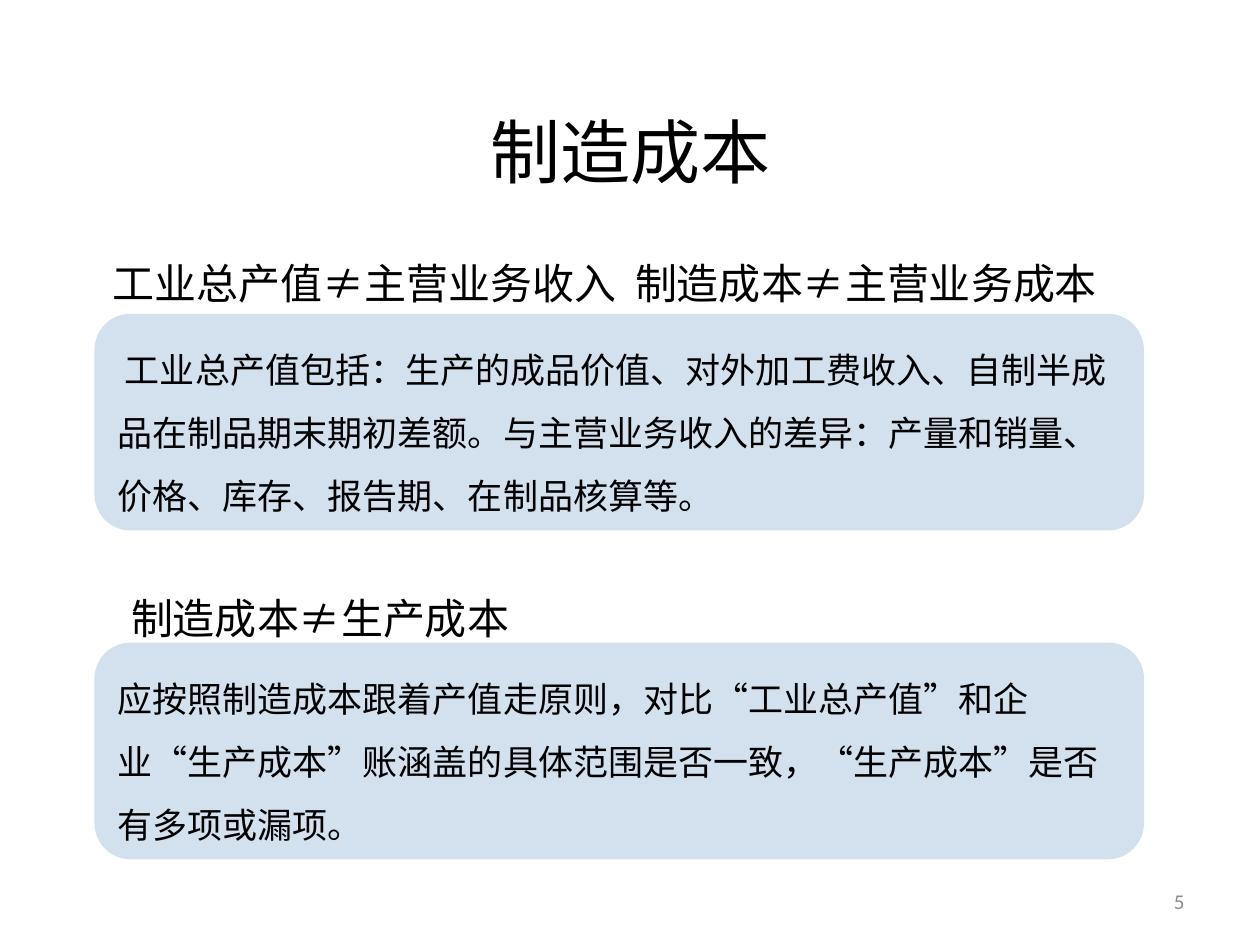
from lxml.etree import SubElement
from pptx import Presentation
from pptx.dml.color import RGBColor
from pptx.enum.shapes import MSO_SHAPE as Shape
from pptx.enum.text import MSO_ANCHOR as Anchor, PP_ALIGN as Align
from pptx.oxml.ns import qn
from pptx.util import Inches, Pt

BLACK = RGBColor(0x00, 0x00, 0x00)
GRAY = RGBColor(0x8C, 0x8C, 0x8C)
PANEL_BLUE = RGBColor(0xB9, 0xCD, 0xE5)
PANEL_OPACITY = 62
CJK_FONT = "Noto Sans CJK SC"

# Content
TITLE = "制造成本"
PAGE_NUMBER = "5"
SECTIONS = [
    {
        "heading": "工业总产值≠主营业务收入\t制造成本≠主营业务成本",
        "heading_at": (0.76, 1.78),
        "body": "工业总产值包括：生产的成品价值、对外加工费收入、自制半成品在制品期末期初差额。"
                "与主营业务收入的差异：产量和销量、价格、库存、报告期、在制品核算等。",
        "panel_top": 2.49,
        "indent": 0.06,
    },
    {
        "heading": "制造成本≠生产成本",
        "heading_at": (0.91, 4.44),
        "body": "应按照制造成本跟着产值走原则，对比“工业总产值”和企业“生产成本”账涵盖的具体范围是否一致，"
                "“生产成本”是否有多项或漏项。",
        "panel_top": 5.1,
        "indent": 0,
    },
]
PANEL_LEFT, PANEL_WIDTH, PANEL_HEIGHT = 0.75, 8.33, 1.72
HEADING_SIZE = (8.32, 0.65)
HEADING_TAB = 4.15


def write(shape, text, size, color=BLACK, font=CJK_FONT, align=Align.LEFT,
          anchor=Anchor.MIDDLE, spacing=1.0, inset=(0.1, 0.05), indent=0, tab=None):
    frame = shape.text_frame
    frame.word_wrap = True
    frame.vertical_anchor = anchor
    frame.margin_left = frame.margin_right = Inches(inset[0])
    frame.margin_top = frame.margin_bottom = Inches(inset[1])
    paragraph = frame.paragraphs[0]
    paragraph.alignment = align
    paragraph.line_spacing = spacing
    properties = paragraph._p.get_or_add_pPr()
    if indent:
        properties.set("indent", str(Inches(indent)))
    if tab:
        stops = SubElement(properties, qn("a:tabLst"))
        SubElement(stops, qn("a:tab"), pos=str(Inches(tab)), algn="l")
    run = paragraph.add_run()
    run.text = text
    run.font.size = Pt(size)
    run.font.color.rgb = color
    run.font.name = font
    SubElement(run._r.get_or_add_rPr(), qn("a:ea"), typeface=font)


def add_panel(slide, top):
    panel = slide.shapes.add_shape(
        Shape.ROUNDED_RECTANGLE, Inches(PANEL_LEFT), Inches(top),
        Inches(PANEL_WIDTH), Inches(PANEL_HEIGHT))
    panel.shadow.inherit = False
    panel.fill.solid()
    panel.fill.fore_color.rgb = PANEL_BLUE
    color = panel._element.spPr.find(qn("a:solidFill")).find(qn("a:srgbClr"))
    SubElement(color, qn("a:alpha"), val=str(PANEL_OPACITY * 1000))
    panel.line.fill.background()
    return panel


def main():
    presentation = Presentation()
    presentation.slide_width, presentation.slide_height = Inches(10), Inches(7.5)
    slide = presentation.slides.add_slide(presentation.slide_layouts[5])

    # Title
    title = slide.shapes.title
    title.left, title.top = Inches(3.29), Inches(0.92)
    title.width, title.height = Inches(3.43), Inches(0.55)
    write(title, TITLE, 40, align=Align.CENTER)

    # Headings and their panels
    for section in SECTIONS:
        panel = add_panel(slide, section["panel_top"])
        write(panel, section["body"], 20, spacing=1.5, indent=section["indent"])
        heading = slide.shapes.add_textbox(
            *map(Inches, section["heading_at"] + HEADING_SIZE))
        write(heading, section["heading"], 24, anchor=Anchor.TOP, spacing=1.5,
              inset=(0.13, 0.06), tab=HEADING_TAB if "\t" in section["heading"] else None)

    # Page number
    number = slide.shapes.add_textbox(Inches(7.17), Inches(6.95), Inches(2.33), Inches(0.4))
    write(number, PAGE_NUMBER, 12, color=GRAY, font="Calibri", align=Align.RIGHT)

    presentation.save("out.pptx")


if __name__ == "__main__":
    main()
